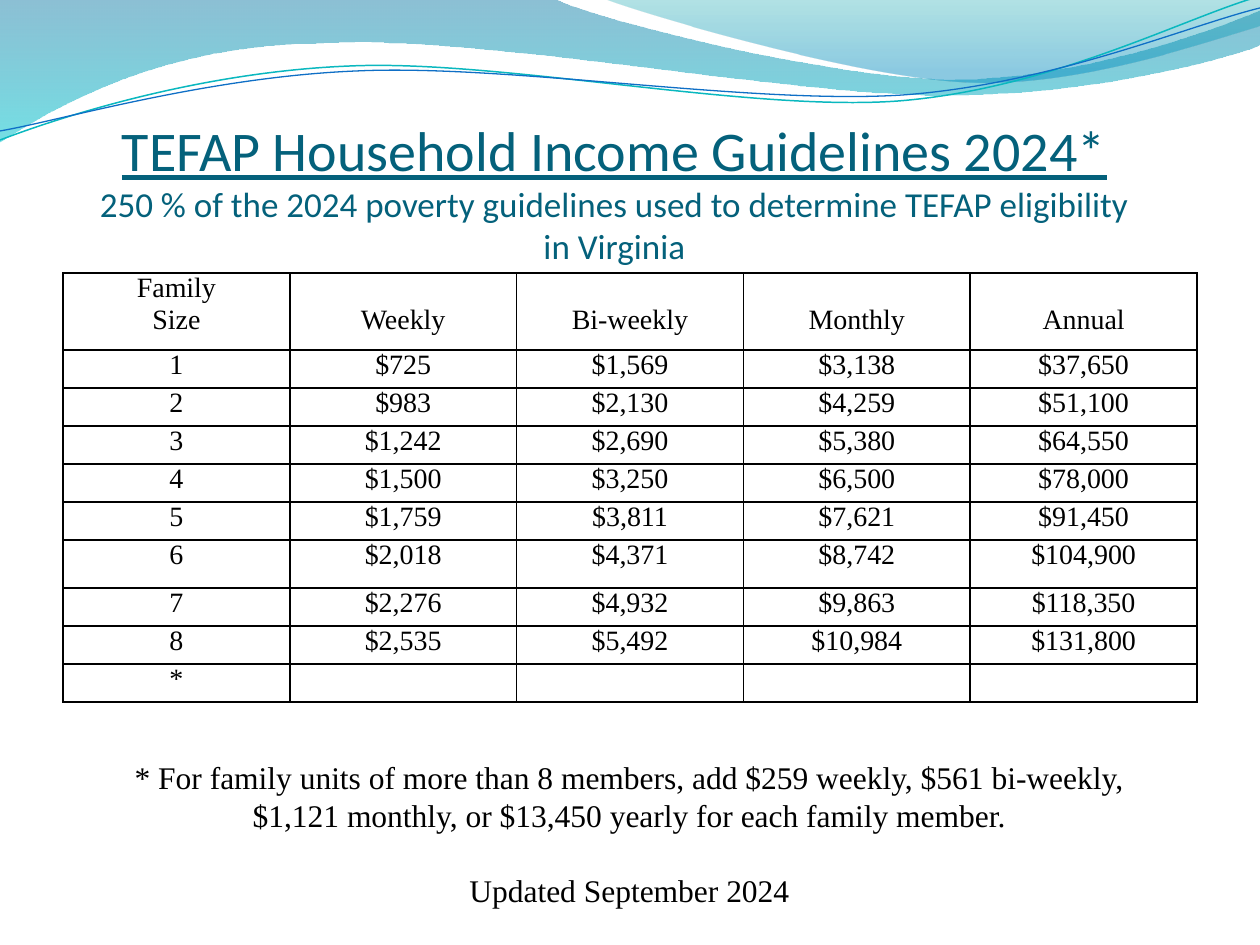
from lxml import etree
from pptx import Presentation
from pptx.dml.color import RGBColor
from pptx.enum.text import MSO_ANCHOR, MSO_AUTO_SIZE, PP_ALIGN
from pptx.oxml.ns import qn
from pptx.util import Pt

CENTER = PP_ALIGN.CENTER
TOP, BOTTOM = MSO_ANCHOR.TOP, MSO_ANCHOR.BOTTOM
GROW = MSO_AUTO_SIZE.SHAPE_TO_FIT_TEXT
EMU_PER_PX = 914400 / 126

COLORS = {"title": "04617B", "ink": "000000", "teal line": "0AB8BF", "blue line": "0F6FC6"}
TITLE_FONT, BODY_FONT = "Calibri", "Times New Roman"

TITLE = "TEFAP Household Income Guidelines 2024*"
SUBTITLE = "250 % of the 2024 poverty guidelines used to determine TEFAP eligibility in Virginia"
NOTE = ("* For family units of more than 8 members, add $259 weekly, $561 bi-weekly, "
        "$1,121 monthly, or $13,450 yearly for each family member.")
UPDATED = "Updated September 2024"

INCOME_LIMITS = [
    ("Family\nSize", "Weekly", "Bi-weekly", "Monthly", "Annual"),
    ("1", "$725", "$1,569", "$3,138", "$37,650"),
    ("2", "$983", "$2,130", "$4,259", "$51,100"),
    ("3", "$1,242", "$2,690", "$5,380", "$64,550"),
    ("4", "$1,500", "$3,250", "$6,500", "$78,000"),
    ("5", "$1,759", "$3,811", "$7,621", "$91,450"),
    ("6", "$2,018", "$4,371", "$8,742", "$104,900"),
    ("7", "$2,276", "$4,932", "$9,863", "$118,350"),
    ("8", "$2,535", "$5,492", "$10,984", "$131,800"),
    ("*", "", "", "", ""),
]
ROW_HEIGHT = 38
SPECIAL_ROW_HEIGHTS = {0: 77, 6: 48}
HEADER_LINE = 32

# An outline is a list of points; a step of three points is a Bézier curve.
# Gradient stops: position, colour, opacity in percent.
WAVES = [
    {"outline": [(0, -1), (554, -1), ((600, 21), (837, 79), (955, 79)),
                 ((1075, 79), (1207, 33), (1260, 11)), (1261, 45),
                 ((1239, 55), (1096, 96), (940, 95)), ((784, 95), (481, 35), (324, 43)),
                 ((163, 44), (58, 105), (-1, 142)), (0, -1)],
     "stops": [(0, "0074A1", 45), (1, "00C6CF", 55)]},
    {"outline": [(604, -1), ((641, 14), (859, 78), (969, 82)),
                 ((1079, 87), (1211, 40), (1260, 26)), (1260, 0), (604, -1)],
     "stops": [(0, "00A1A9", 30), (0.8, "008BBF", 45)]},
]
WAVE_LINES = [
    {"outline": [(0, 140), ((60, 117), (199, 72), (349, 66)),
                 ((498, 59), (747, 112), (898, 101)), ((1050, 89), (1182, 19), (1257, -3))],
     "color": "teal line", "width": 0.85},
    {"outline": [(0, 131), ((59, 121), (207, 77), (357, 71)),
                 ((508, 64), (752, 105), (903, 95)), ((1053, 84), (1187, 26), (1260, 8))],
     "color": "blue line", "width": 0.75},
]


def px(length):
    return round(length * EMU_PER_PX)


def rgb(name):
    return RGBColor.from_string(COLORS[name])


def add_outline(page, outline, close):
    """Draw straight segments through all points, then bend each three-point step."""
    start, *steps = outline
    steps = [step if len(step) == 3 else (step,) for step in steps]
    builder = page.shapes.build_freeform(*start, scale=EMU_PER_PX)
    builder.add_line_segments([point for step in steps for point in step], close=close)
    shape = builder.convert_to_shape()
    shape.shadow.inherit = False
    segments = iter(list(shape._element.spPr.iter(qn("a:lnTo"))))
    for step in steps:
        parts = [next(segments) for _ in step]
        if len(parts) == 3:
            curve = etree.Element(qn("a:cubicBezTo"))
            parts[0].addprevious(curve)
            for part in parts:
                curve.append(part[0])
                part.getparent().remove(part)
    return shape


def add_wave(page, wave):
    shape = add_outline(page, wave["outline"], True)
    shape.line.fill.background()
    shape.fill.gradient()
    shape.fill.gradient_angle = 270
    for stop, (position, color, _) in zip(shape.fill.gradient_stops, wave["stops"]):
        stop.position = position
        stop.color.rgb = RGBColor.from_string(color)
    for tag, (_, _, opacity) in zip(shape._element.spPr.iter(qn("a:srgbClr")), wave["stops"]):
        etree.SubElement(tag, qn("a:alpha"), val=str(opacity * 1000))


def add_wave_line(page, wave):
    shape = add_outline(page, wave["outline"], False)
    shape.fill.background()
    shape.line.color.rgb = rgb(wave["color"])
    shape.line.width = Pt(wave["width"])


def style(font, color, **formats):
    font.color.rgb = rgb(color)
    for name, value in formats.items():
        setattr(font, name, value)


def add_text_box(page, left, top, width, height, **formats):
    frame = page.shapes.add_textbox(px(left), px(top), px(width), px(height)).text_frame
    frame.word_wrap = True
    for name, value in formats.items():
        setattr(frame, name, value)
    return frame


def add_title(page):
    frame = add_text_box(page, 84, 94, 1061, 173, vertical_anchor=BOTTOM,
                         margin_left=0, margin_right=0, margin_top=px(6), margin_bottom=0)
    para = frame.paragraphs[0]
    para.alignment = CENTER
    for text, size, underline in ((TITLE, 32, True), (SUBTITLE, 20, False)):
        if para.runs:
            para.add_line_break()
        span = para.add_run()
        span.text = text
        style(span.font, "title", name=TITLE_FONT, size=Pt(size), underline=underline)


def add_borders(cell):
    properties = cell._tc.get_or_add_tcPr()
    for position, side in enumerate(("lnL", "lnR", "lnT", "lnB")):
        line = etree.Element(qn(f"a:{side}"), w=str(Pt(1)))
        fill = etree.SubElement(line, qn("a:solidFill"))
        etree.SubElement(fill, qn("a:srgbClr"), val=COLORS["ink"])
        properties.insert(position, line)


def fill_cell(cell, text, top_margin):
    formats = {"margin_left": px(9), "margin_right": px(9), "margin_top": px(top_margin),
               "margin_bottom": 0, "vertical_anchor": TOP}
    for name, value in formats.items():
        setattr(cell, name, value)
    cell.fill.background()
    add_borders(cell)
    if not text:
        return
    cell.text = text
    for para in cell.text_frame.paragraphs:
        para.alignment = CENTER
        for span in para.runs:
            style(span.font, "ink", name=BODY_FONT, size=Pt(16))


def add_income_table(page):
    heights = [SPECIAL_ROW_HEIGHTS.get(row, ROW_HEIGHT) for row in range(len(INCOME_LIMITS))]
    table = page.shapes.add_table(len(heights), len(INCOME_LIMITS[0]), px(63), px(273),
                                  px(1134), px(sum(heights))).table
    table.first_row = table.horz_banding = False
    for row, (height, texts) in enumerate(zip(heights, INCOME_LIMITS)):
        table.rows[row].height = px(height)
        for column, text in enumerate(texts):
            lowered = row == 0 and "\n" not in text
            fill_cell(table.cell(row, column), text, HEADER_LINE if lowered else 0)


def add_note(page):
    frame = add_text_box(page, 84, 752, 1091, 165, auto_size=GROW)
    frame.text = f"{NOTE}\n{UPDATED}"
    for para in frame.paragraphs:
        para.alignment = CENTER
        for span in para.runs:
            style(span.font, "ink", name=BODY_FONT, size=Pt(18))
    frame.paragraphs[1].space_before = Pt(21.5)


def main():
    deck = Presentation()
    deck.slide_width, deck.slide_height = px(1260), px(945)
    page = deck.slides.add_slide(deck.slide_layouts[6])
    for wave in WAVES:
        add_wave(page, wave)
    for wave in WAVE_LINES:
        add_wave_line(page, wave)
    add_title(page)
    add_income_table(page)
    add_note(page)
    deck.save("out.pptx")


if __name__ == "__main__":
    main()
